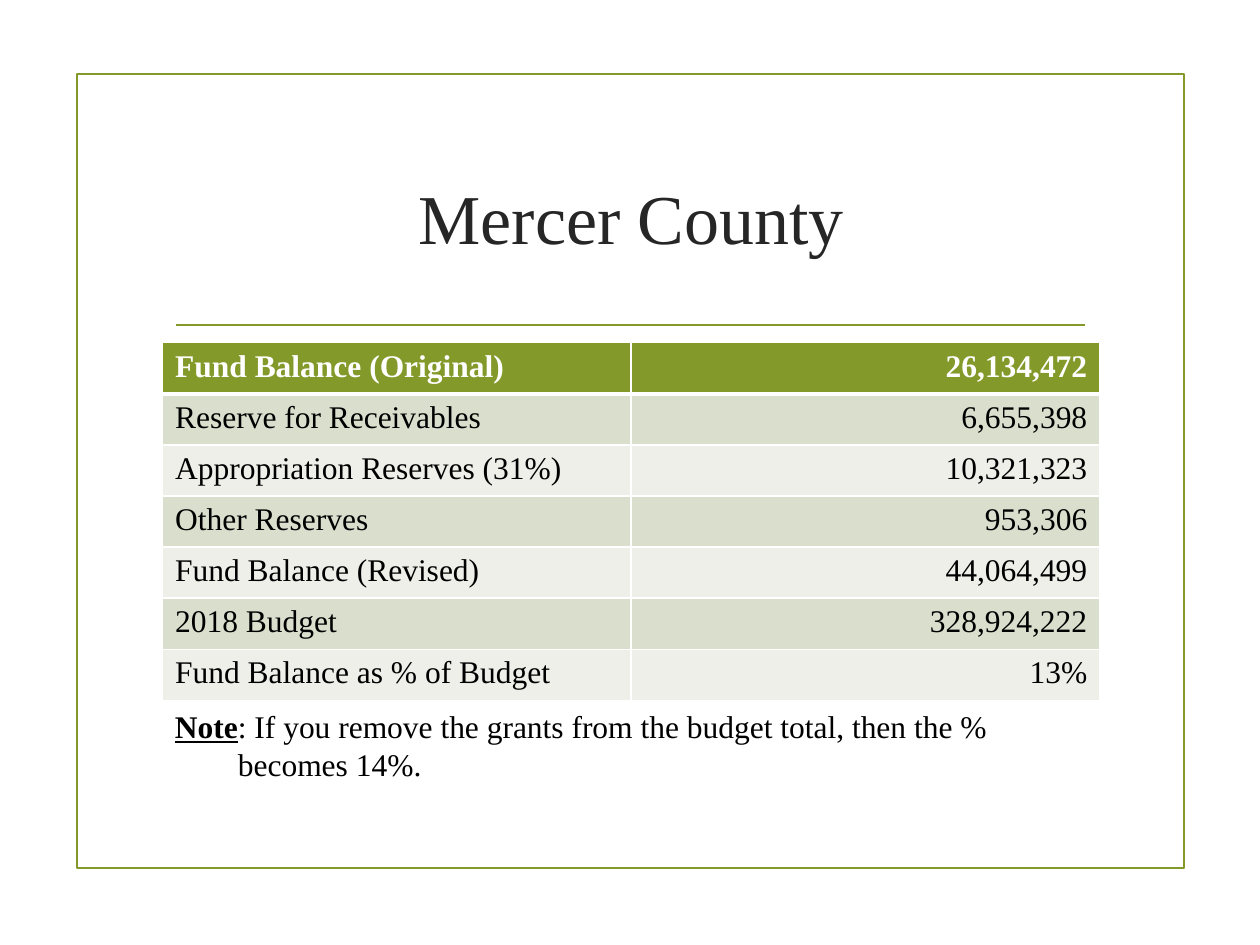
from lxml import etree
from pptx import Presentation
from pptx.dml.color import RGBColor
from pptx.enum.shapes import MSO_CONNECTOR, MSO_SHAPE
from pptx.enum.text import MSO_ANCHOR, PP_ALIGN
from pptx.oxml.ns import qn
from pptx.util import Inches, Pt

RECT, STRAIGHT = MSO_SHAPE.RECTANGLE, MSO_CONNECTOR.STRAIGHT
MIDDLE = MSO_ANCHOR.MIDDLE
LEFT, CENTER, RIGHT = PP_ALIGN.LEFT, PP_ALIGN.CENTER, PP_ALIGN.RIGHT
GREEN, WHITE, BLACK = "83992A", "FFFFFF", "000000"
BANDS = ["EDEFE8", "D9DECD"]
ROW_H = Inches(2.84 / 7)


def rgb(color):
    return RGBColor.from_string(color)


def set_font(font, size, color, bold=False):
    font.name = "Times New Roman"
    font.size = Pt(size)
    font.bold = bold
    font.color.rgb = rgb(color)


prs = Presentation()
prs.slide_width, prs.slide_height = Inches(10), Inches(7.5)
s = prs.slides.add_slide(prs.slide_layouts[5])

# Frame and rule under the title
frame = s.shapes.add_shape(RECT, Inches(0.61), Inches(0.59), Inches(8.79), Inches(6.3))
frame.shadow.inherit = False
frame.fill.background()
rule = s.shapes.add_connector(STRAIGHT, Inches(1.4), Inches(2.58), Inches(8.61), Inches(2.58))
etree.SubElement(rule._element.spPr, qn("a:effectLst"))
for sp in (frame, rule):
    sp.line.color.rgb = rgb(GREEN)
    sp.line.width = Pt(1.25)

# Title
title = s.shapes.title
title.left, title.top = Inches(1.29), Inches(1)
title.width, title.height = Inches(7.44), Inches(1.43)
tf = title.text_frame
tf.text = "Mercer County"
tf.vertical_anchor = MIDDLE
p = tf.paragraphs[0]
p.alignment = CENTER
set_font(p.runs[0].font, 40, "262626")

# Fund balance table
rows = [
    ("Fund Balance (Original)", "26,134,472"),
    ("Reserve for Receivables", "6,655,398"),
    ("Appropriation Reserves (31%)", "10,321,323"),
    ("Other Reserves", "953,306"),
    ("Fund Balance (Revised)", "44,064,499"),
    ("2018 Budget", "328,924,222"),
    ("Fund Balance as % of Budget", "13%"),
]
table = s.shapes.add_table(len(rows), 2, Inches(1.29), Inches(2.72),
                           Inches(7.44), ROW_H * len(rows)).table
for i, row in enumerate(rows):
    table.rows[i].height = ROW_H
    header = i == 0
    for j, text in enumerate(row):
        cell = table.cell(i, j)
        # White borders, thicker between the header and the body
        tc_pr = cell._tc.get_or_add_tcPr()
        for side in ("lnL", "lnR", "lnT", "lnB"):
            thick = (i, side) in ((0, "lnB"), (1, "lnT"))
            ln = etree.SubElement(tc_pr, qn(f"a:{side}"), w=str(Pt(3 if thick else 1)))
            fill = etree.SubElement(ln, qn("a:solidFill"))
            etree.SubElement(fill, qn("a:srgbClr"), val=WHITE)
        cell.fill.solid()
        cell.fill.fore_color.rgb = rgb(GREEN if header else BANDS[i % 2])
        cell.text_frame.text = text
        p = cell.text_frame.paragraphs[0]
        p.alignment = RIGHT if j else LEFT
        set_font(p.runs[0].font, 18, WHITE if header else BLACK, header)

# Note, its second line indented by a tab
note = s.shapes.add_textbox(Inches(1.29), Inches(5.56), Inches(7.44), Inches(0.71))
tf = note.text_frame
tf.word_wrap = True
p = tf.paragraphs[0]
for text in ("Note", ": If you remove the grants from the budget total, then the %"):
    r = p.add_run()
    r.text = text
    set_font(r.font, 18, BLACK, text == "Note")
p.runs[0].font.underline = True
p = tf.add_paragraph()
tabs = etree.SubElement(p._p.get_or_add_pPr(), qn("a:tabLst"))
etree.SubElement(tabs, qn("a:tab"), pos=str(Inches(0.5)), algn="l")
r = p.add_run()
r.text = "\tbecomes 14%."
set_font(r.font, 18, BLACK)

prs.save("out.pptx")
